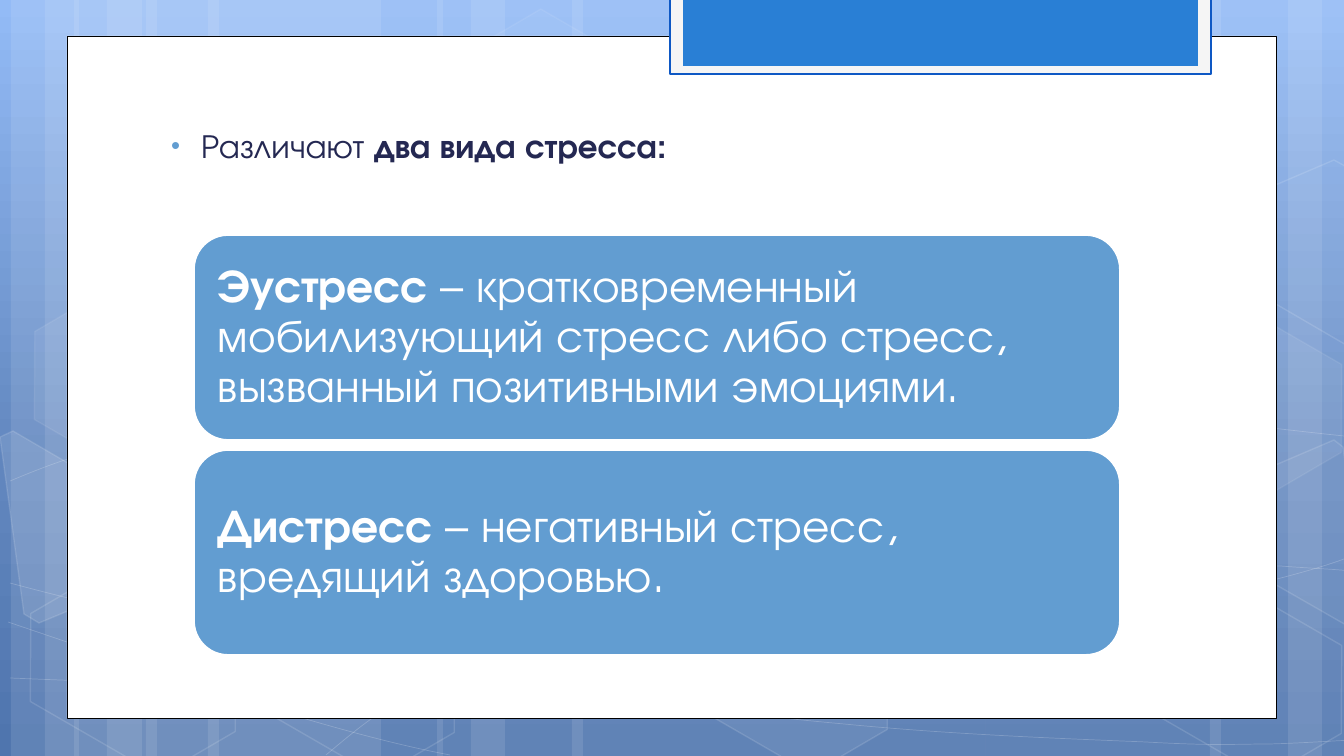
from copy import deepcopy

from pptx import Presentation
from pptx.dml.color import RGBColor
from pptx.enum.shapes import MSO_SHAPE as Preset
from pptx.enum.text import MSO_ANCHOR as Anchor, PP_ALIGN as Align
from pptx.oxml.ns import qn
from pptx.oxml.xmlchemy import OxmlElement as new_element
from pptx.util import Pt

# Content
INTRO = ("Различают", " два вида стресса:")
CARDS = [
    ("Эустресс", " – кратковременный мобилизующий стресс либо стресс, "
                 "вызванный позитивными эмоциями."),
    ("Дистресс", " – негативный стресс, вредящий здоровью."),
]
FONT = "TeX Gyre Adventor"
COLORS = {
    "white": "FFFFFF", "black": "000000", "navy": "242852", "card": "629DD1",
    "tab_edge": "F5F5F5", "tab_line": "0E58C4", "tab": "297FD5",
}
BACKGROUND = [(0, "93BBF6"), (0.62, "6186BE"), (1, "4F75AE")]

# Lengths in px
SCALE = 914400 / 100.8
WIDTH, HEIGHT = 1344, 756
STRIPES = [  # left, width
    (146, 235), (11, 68), (45, 112), (208, 235), (74, 68), (107, 112),
    (986, 235), (1288, 68), (1210, 112), (572, 414), (437, 68), (471, 112),
]
WAVES = [  # start point, then two controls and an end for each curve
    [(10, 678), (83, 681), (155, 684), (256, 683), (357, 682), (481, 680), (615, 670),
     (750, 660), (940, 641), (1063, 622), (1187, 603), (1313, 573), (1354, 555)],
    [(10, 481), (48, 465), (87, 450), (163, 434), (240, 419), (348, 397), (467, 390),
     (587, 383), (731, 382), (879, 390), (1027, 398), (1273, 429), (1354, 437)],
    [(8, 622), (170, 677), (333, 733), (450, 755)],
    [(10, 583), (51, 594), (94, 605), (172, 621), (250, 636), (367, 661), (479, 678),
     (591, 696), (733, 714), (844, 724), (956, 735), (1075, 739), (1146, 742),
     (1217, 746), (1235, 744), (1270, 744), (1304, 743), (1330, 741), (1354, 740)],
    [(326, 755), (350, 735), (373, 715), (406, 697), (438, 678), (484, 658), (521, 644),
     (558, 630), (582, 624), (631, 614), (680, 604), (771, 590), (817, 583),
     (864, 576), (872, 576), (914, 574), (956, 571), (1021, 568), (1067, 566),
     (1114, 565), (1191, 566), (1191, 566), (1221, 566), (1250, 566), (1280, 566),
     (1305, 568), (1328, 569), (1340, 570), (1352, 571), (1348, 570), (1352, 571)],
]
HEXAGONS = [  # left, top, fill opacity, line opacity
    (449, 36, 4, 8), (667, 594, 6, 12), (15, 596, 0, 12), (19, 314, 7, 8),
    (234, 597, 0, 12), (1121, 598, 0, 12), (1121, 317, 7, 8),
]
SHARDS = [  # fill opacity, corners
    (10, [(0, 437), (13, 431), (116, 491), (128, 586), (39, 623), (24, 614)]),
    (4, [(1245, 478), (1334, 440), (1343, 447), (1368, 630), (1360, 633), (1257, 574)]),
    (0, [(1245, 198), (1334, 160), (1345, 166), (1368, 349), (1360, 353), (1257, 293)]),
]
PANELS = [  # box, fill, line, line width
    ((67, 36, 1209, 682), "white", "black", 0.5),
    ((670, -2, 541, 76), "tab_edge", "tab_line", 1.25),
    ((683, -2, 515, 68), "tab", None, 0),
]
CARD_LEFT, CARD_TOP, CARD_WIDTH, CARD_HEIGHT, CARD_STEP = 194, 235, 926, 205, 215


def emu(px):
    return round(px * SCALE)


def paint(fill, color, opacity=100):
    if not opacity:
        fill.background()
        return
    fill.solid()
    fill.fore_color.rgb = RGBColor.from_string(COLORS[color])
    if opacity < 100:
        alpha = new_element("a:alpha")
        alpha.set("val", str(opacity * 1000))
        fill._xPr.find(".//" + qn("a:srgbClr")).append(alpha)


def style(shape, fill, line, line_width, fill_opacity=100, line_opacity=100):
    shape.shadow.inherit = False
    paint(shape.fill, fill, fill_opacity)
    if line:
        shape.line.width = Pt(line_width)
        paint(shape.line.fill, line, line_opacity)
    else:
        shape.line.fill.background()


def add_preset(preset, box):
    return slide.shapes.add_shape(preset, *map(emu, box))


def add_outline(points, close):
    builder = slide.shapes.build_freeform(*points[0], scale=SCALE)
    builder.add_line_segments(points[1:], close=close)
    return builder.convert_to_shape()


def add_curve(knots):
    shape = add_outline(knots, False)
    segments = list(shape.element.iter(qn("a:lnTo")))
    for first in range(0, len(segments), 3):
        curve = new_element("a:cubicBezTo")
        segments[first].addprevious(curve)
        for segment in segments[first:first + 3]:
            curve.append(segment[0])
            segment.getparent().remove(segment)
    return shape


def write_runs(paragraph, texts, size, color, bold_index):
    for index, text in enumerate(texts):
        run = paragraph.add_run()
        run.text = text
        run.font.name, run.font.size = FONT, Pt(size)
        run.font.bold = index == bold_index
        run.font.color.rgb = RGBColor.from_string(COLORS[color])


presentation = Presentation()
presentation.slide_width, presentation.slide_height = emu(WIDTH), emu(HEIGHT)
layout = presentation.slide_layouts[1]
slide = presentation.slides.add_slide(layout)
title, body = slide.placeholders
title.element.getparent().remove(title.element)

# Background gradient
background = slide.background.fill
background.gradient()
background.gradient_angle = 270
stop_list = next(slide.element.iter(qn("a:gsLst")))
stop_list.append(deepcopy(stop_list[-1]))
for stop, (position, color) in zip(background.gradient_stops, BACKGROUND):
    stop.position = position
    stop.color.rgb = RGBColor.from_string(color)

# Stripes, waves, hexagons and shards
for left, width in STRIPES:
    style(add_preset(Preset.RECTANGLE, (left, 0, width, HEIGHT)), "white", None, 0, 10)
for knots in WAVES:
    style(add_curve(knots), "white", "white", 0.5, 0, 20)
for left, top, fill_opacity, line_opacity in HEXAGONS:
    hexagon = add_preset(Preset.HEXAGON, (left, top, 236, 153))
    hexagon.adjustments[0] = 0.285
    hexagon.rotation = 30
    style(hexagon, "white", "white", 1, fill_opacity, line_opacity)
for fill_opacity, corners in SHARDS:
    style(add_outline(corners, True), "white", "white", 1, fill_opacity, 12)

# White panel and blue tab
for box, fill, line, line_width in PANELS:
    style(add_preset(Preset.RECTANGLE, box), fill, line, line_width)

# The decoration belongs to the layout, which keeps only its body placeholder
for placeholder in list(layout.placeholders):
    if placeholder.placeholder_format.idx != body.placeholder_format.idx:
        placeholder.element.getparent().remove(placeholder.element)
layout_tree = layout.placeholders[0].element.getparent()
for shape in list(slide.shapes):
    if not shape.is_placeholder:
        layout_tree.append(shape.element)

# Intro bullet
body.left, body.top, body.width, body.height = map(emu, (153, 120, 996, 523))
paragraph = body.text_frame.paragraphs[0]
write_runs(paragraph, INTRO, 24, "navy", 1)
properties = paragraph._p.get_or_add_pPr()
properties.set("marL", str(emu(38)))
properties.set("indent", str(emu(-30)))
bullet_color = new_element("a:buClr")
color_value = new_element("a:srgbClr")
color_value.set("val", COLORS["card"])
bullet_color.append(color_value)
properties.append(bullet_color)
for tag, name, value in [("a:buSzPct", "val", "76000"), ("a:buFont", "typeface", "Arial"),
                         ("a:buChar", "char", "•")]:
    element = new_element(tag)
    element.set(name, value)
    properties.append(element)

# Stress cards
for index, texts in enumerate(CARDS):
    card = add_preset(Preset.ROUNDED_RECTANGLE,
                      (CARD_LEFT, CARD_TOP + index * CARD_STEP, CARD_WIDTH, CARD_HEIGHT))
    style(card, "card", "white", 1.25)
    frame = card.text_frame
    frame.word_wrap = True
    frame.vertical_anchor = Anchor.MIDDLE
    frame.margin_left = frame.margin_right = frame.margin_top = frame.margin_bottom = emu(14)
    paragraph = frame.paragraphs[0]
    paragraph.alignment = Align.LEFT
    paragraph.line_spacing = 0.9
    write_runs(paragraph, texts, 33, "white", 0)

presentation.save("out.pptx")
